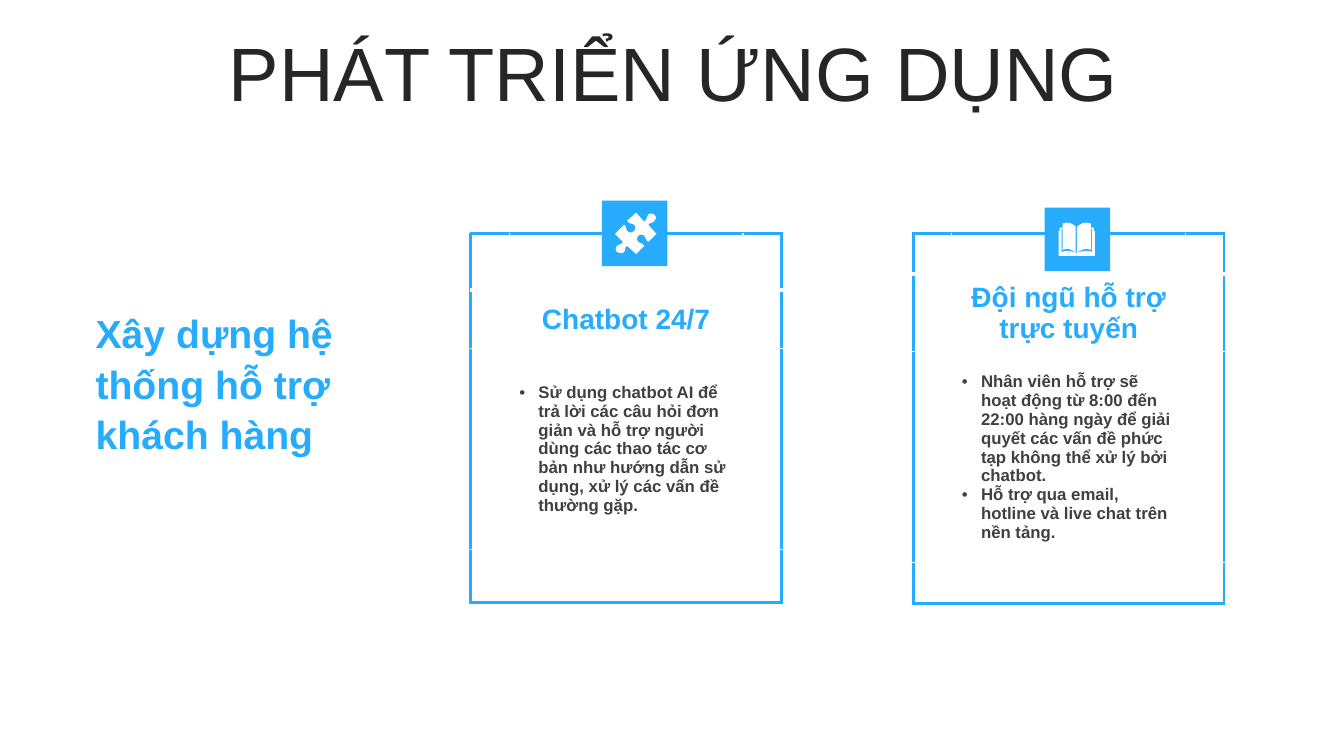
import pptx
import pptx.util
import pptx.dml.color
import pptx.enum.shapes
import pptx.enum.text
import pptx.oxml.ns
import lxml.etree

Inches = pptx.util.Inches
Pt = pptx.util.Pt
qn = pptx.oxml.ns.qn
ALIGN = pptx.enum.text.PP_ALIGN
MIDDLE = pptx.enum.text.MSO_ANCHOR.MIDDLE
COLORS = {"blue": "27ACFD", "white": "FFFFFF", "title": "262626", "body": "404040"}


def write(para, text, size, color, bold=True):
    span = para.add_run()
    span.text = text
    span.font.name = "Arial"
    span.font.size = Pt(size)
    span.font.bold = bold
    span.font.color.rgb = pptx.dml.color.RGBColor.from_string(COLORS[color])


def paint(shape, color):
    shape.shadow.inherit = False
    shape.fill.solid()
    shape.fill.fore_color.rgb = pptx.dml.color.RGBColor.from_string(COLORS[color])
    shape.line.fill.background()


# Icon outlines are in hundredths of an inch: pairs are lines, sixes are curves.
PUZZLE = [
    (649, 213), (651, 215, 651, 217, 649, 219), (648, 222, 645, 220, 643, 223),
    (651, 232), (643, 240), (640, 238, 641, 236, 639, 234),
    (637, 232, 634, 233, 633, 234), (632, 235, 631, 238, 633, 240),
    (636, 242, 637, 241, 639, 244), (631, 252), (622, 244),
    (619, 246, 621, 247, 619, 250), (617, 252, 614, 251, 612, 250),
    (611, 249, 610, 246, 612, 244), (614, 242, 616, 243, 618, 240),
    (610, 232), (619, 223), (622, 225, 620, 228, 623, 230),
    (625, 231, 627, 231, 629, 229), (630, 228, 631, 225, 629, 223),
    (626, 221, 625, 223, 622, 219), (631, 211), (639, 220),
    (642, 217, 641, 216, 643, 213), (645, 211, 648, 212, 649, 213),
]
BOOK = [
    (1067, 251), (1068, 251), (1074, 249, 1077, 248, 1083, 250),
    (1083, 227), (1082, 227), (1082, 248), (1078, 246, 1073, 247, 1068, 251),
    (1068, 225), (1071, 223, 1073, 221, 1077, 221), (1078, 221, 1080, 221, 1082, 222),
    (1082, 226), (1085, 226), (1085, 229), (1086, 229), (1086, 254), (1050, 254),
    (1050, 229), (1051, 229), (1051, 226), (1054, 226), (1054, 222),
    (1056, 221, 1058, 221, 1059, 221), (1062, 221, 1065, 223, 1067, 225),
    (1067, 251), (1063, 247, 1058, 246, 1054, 248), (1054, 227), (1053, 227),
    (1053, 250), (1059, 248, 1062, 249, 1067, 251),
]
CARDS = [
    {
        "left": 4.67, "rows": [0.56, 0.58, 1.99, 0.53],
        "heading": "Chatbot 24/7",
        "points": ["Sử dụng chatbot AI để trả lời các câu hỏi đơn giản và hỗ trợ người dùng "
                   "các thao tác cơ bản như hướng dẫn sử dụng, xử lý các vấn đề thường gặp."],
        "badge": (5.97, 1.99, 0.65, 0.65), "icon": PUZZLE,
    },
    {
        "left": 9.06, "rows": [0.4, 0.77, 2.09, 0.41],
        "heading": "Đội ngũ hỗ trợ trực tuyến",
        "points": ["Nhân viên hỗ trợ sẽ hoạt động từ 8:00 đến 22:00 hàng ngày để giải quyết "
                   "các vấn đề phức tạp không thể xử lý bởi chatbot.",
                   "Hỗ trợ qua email, hotline và live chat trên nền tảng."],
        "badge": (10.36, 2.06, 0.65, 0.63), "icon": BOOK,
    },
]
COLUMNS = [0.38, 2.32, 0.38]

deck = pptx.Presentation()
deck.slide_width = Inches(13.33)
deck.slide_height = Inches(7.5)
page = deck.slides.add_slide(deck.slide_layouts[6])

title = page.shapes.add_textbox(Inches(0.35), Inches(0.37), Inches(12.66), Inches(0.79))
title.text_frame.word_wrap = True
title.text_frame.vertical_anchor = MIDDLE
para = title.text_frame.paragraphs[0]
para.alignment = ALIGN.CENTER
para.line_spacing = 0.9
para.space_before = Pt(10)
write(para, "PHÁT TRIỂN ỨNG DỤNG", 54, "title", False)

topic = page.shapes.add_textbox(Inches(0.85), Inches(2.99), Inches(2.96), Inches(1.51))
topic.text_frame.word_wrap = True
para = topic.text_frame.paragraphs[0]
para.line_spacing = 1.07
write(para, "Xây dựng hệ thống hỗ trợ khách hàng", 28, "blue")

for card in CARDS:
    frame = page.shapes.add_table(
        4, 3, Inches(card["left"]), Inches(2.32), Inches(sum(COLUMNS)), Inches(sum(card["rows"])))
    table = frame.table
    table.first_row = False
    table.horz_banding = False
    for column, width in zip(table.columns, COLUMNS):
        column.width = Inches(width)
    for row, height in zip(table.rows, card["rows"]):
        row.height = Inches(height)

    for r in range(4):
        for c in range(3):
            cell = table.cell(r, c)
            cell.fill.solid()
            cell.fill.fore_color.rgb = pptx.dml.color.RGBColor.from_string(COLORS["white"])
            outer = {"a:lnL": c == 0, "a:lnR": c == 2, "a:lnT": r == 0, "a:lnB": r == 3}
            properties = cell.fill._xPr
            for position, (side, is_outer) in enumerate(outer.items()):
                heavy_gap = (side == "a:lnB" and r == 0) or (side == "a:lnT" and r == 1)
                width = 2.25 if is_outer else 3 if heavy_gap else 1
                border = lxml.etree.Element(qn(side), w=str(Pt(width)))
                fill = lxml.etree.SubElement(border, qn("a:solidFill"))
                color = COLORS["blue" if is_outer else "white"]
                lxml.etree.SubElement(fill, qn("a:srgbClr"), val=color)
                properties.insert(position, border)

    heading = table.cell(1, 1)
    heading.vertical_anchor = MIDDLE
    para = heading.text_frame.paragraphs[0]
    para.alignment = ALIGN.CENTER
    write(para, card["heading"], 20, "blue")

    body = table.cell(2, 1)
    body.vertical_anchor = MIDDLE
    for index, point in enumerate(card["points"]):
        para = body.text_frame.add_paragraph() if index else body.text_frame.paragraphs[0]
        layout = para._p.get_or_add_pPr()
        layout.set("marL", str(Inches(0.19)))
        layout.set("indent", str(-Inches(0.19)))
        lxml.etree.SubElement(layout, qn("a:buFont"), typeface="Arial")
        lxml.etree.SubElement(layout, qn("a:buChar"), char="•")
        write(para, point, 12, "body")

    badge = page.shapes.add_shape(
        pptx.enum.shapes.MSO_SHAPE.RECTANGLE, *[Inches(value) for value in card["badge"]])
    paint(badge, "blue")

    outline = [card["icon"][0]]
    for step in card["icon"][1:]:
        if len(step) == 2:
            outline.append(step)
            continue
        x0, y0 = outline[-1]
        x1, y1, x2, y2, x3, y3 = step
        for t in (0.2, 0.4, 0.6, 0.8, 1):
            u = 1 - t
            weights = (u ** 3, 3 * u * u * t, 3 * u * t * t, t ** 3)
            outline.append((sum(w * x for w, x in zip(weights, (x0, x1, x2, x3))),
                            sum(w * y for w, y in zip(weights, (y0, y1, y2, y3)))))
    corners = [(Inches(x / 100), Inches(y / 100)) for x, y in outline]
    builder = page.shapes.build_freeform(*corners[0])
    builder.add_line_segments(corners[1:], close=True)
    paint(builder.convert_to_shape(), "white")

deck.save("out.pptx")
